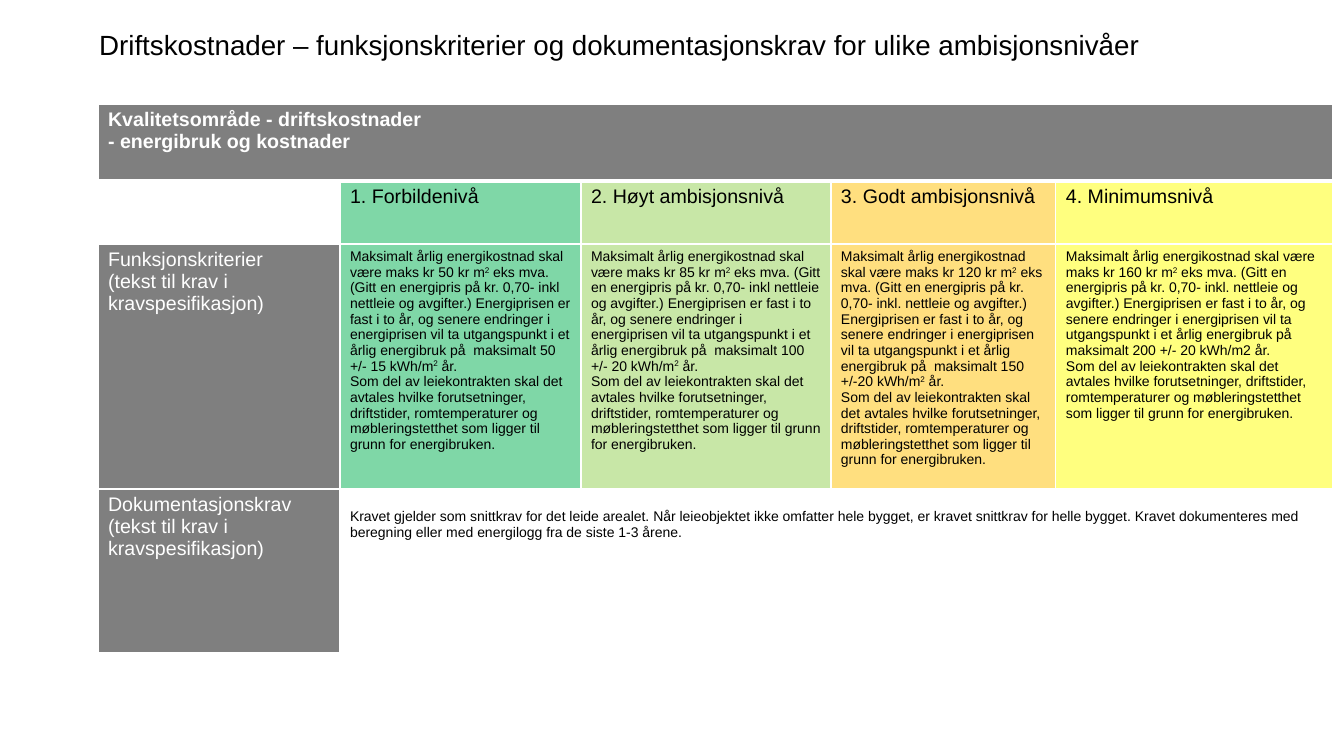
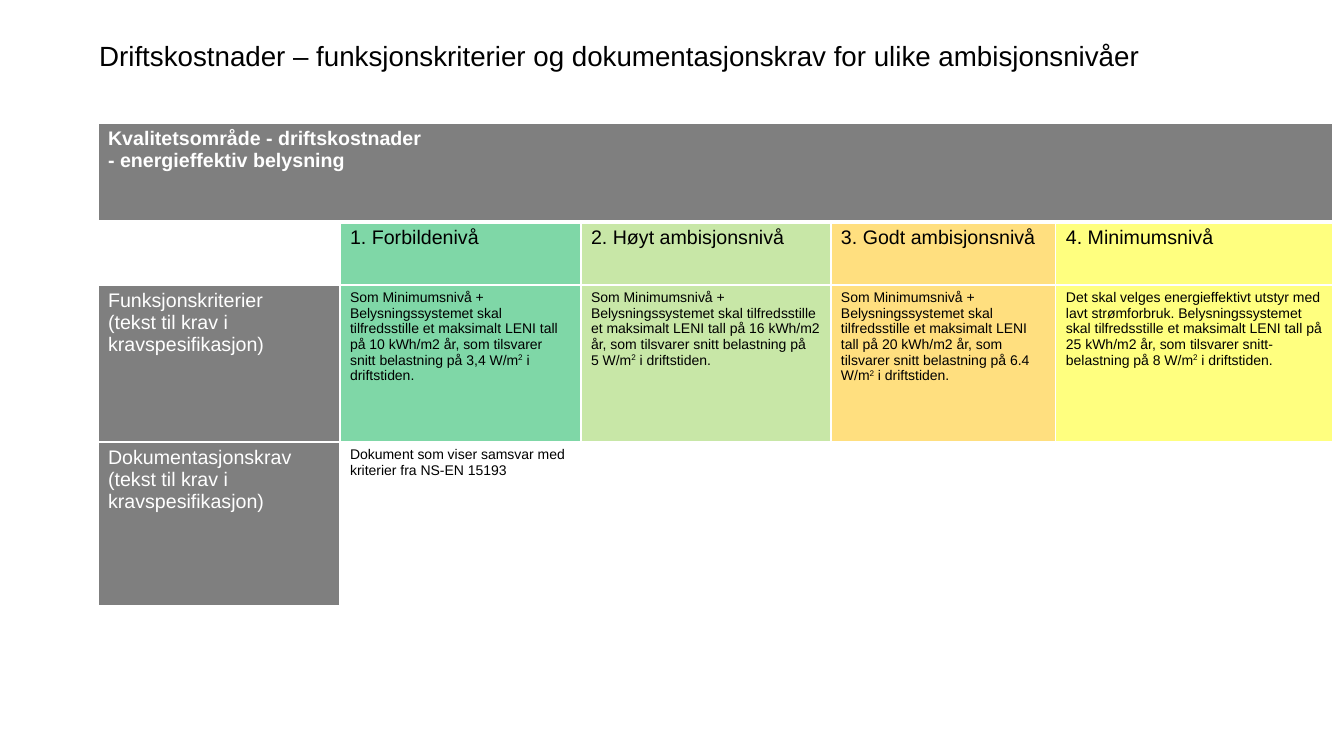
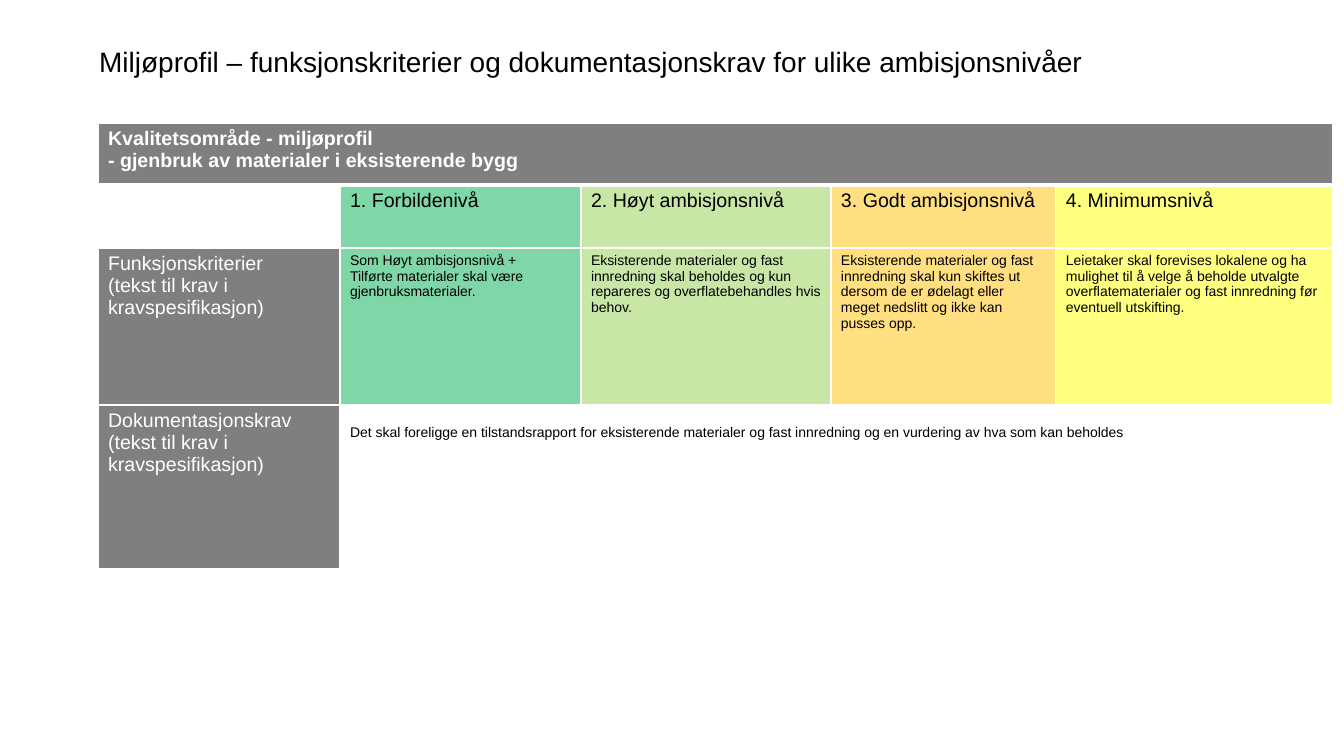
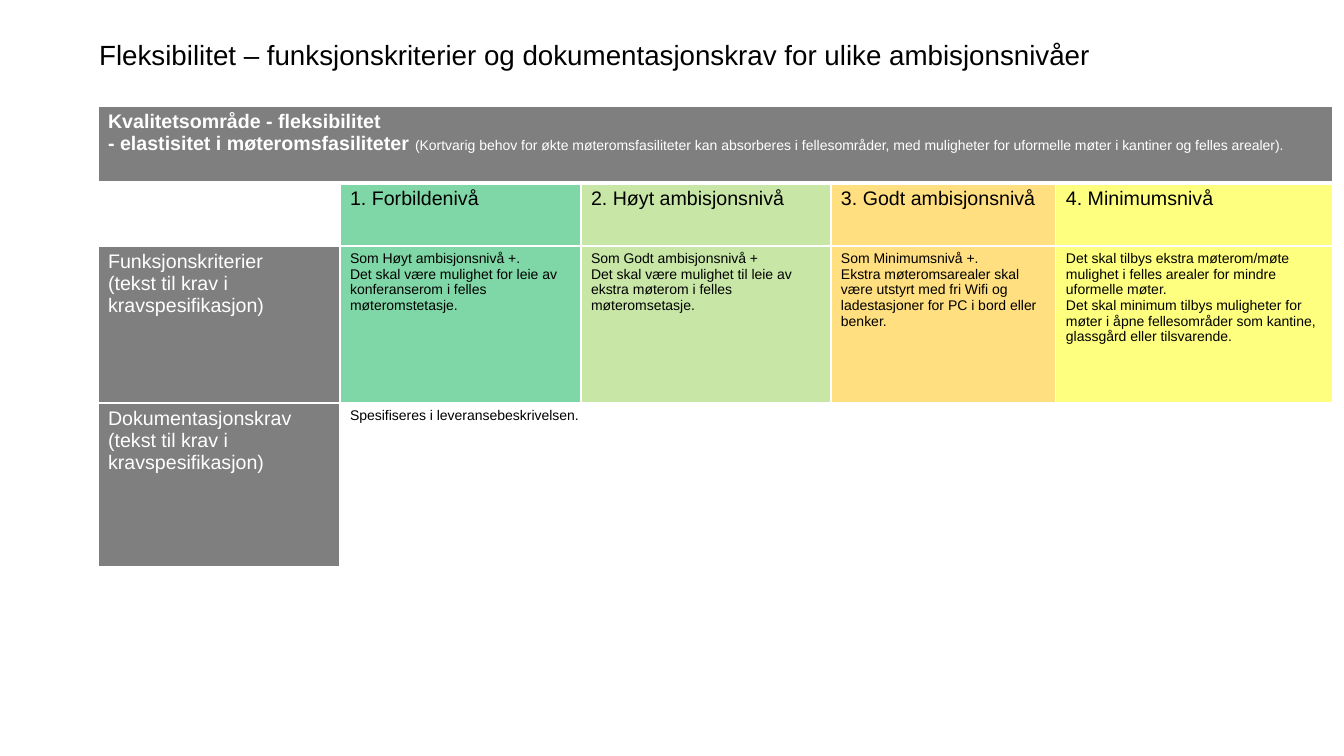
from dataclasses import dataclass

from lxml.etree import SubElement
from pptx import Presentation
from pptx.dml.color import RGBColor as RGB
from pptx.enum.text import MSO_ANCHOR, MSO_AUTO_SIZE, PP_ALIGN
from pptx.oxml.ns import qn
from pptx.util import Pt

PX = 914400 / 100.8


@dataclass(frozen=True)
class Theme:
    font: str = "Arial"
    black: str = "000000"
    white: str = "FFFFFF"
    levels: tuple = ("00B050", "92D050", "FFC000", "FFFF00")
    heading: int = 14
    body: int = 10
    border: int = 1
    header_rule: int = 3


T = Theme()

SLIDE_W, SLIDE_H = 1344, 756
TITLE_X, TITLE_W, TITLE_H = 89, 1159, 68
TABLE_X = 98
COLS = (242, 241, 250, 225, 277)
LEVEL_H, DOC_H = 63, 164
DOC_INSET, DOC_INSET_LOW = 5, 20

# How many columns each cell takes, from the second column on.
LEVEL_SPANS, DOC_SPANS = (1, 1, 1, 1), (4,)

LEVELS = ("1. Forbildenivå", "2. Høyt ambisjonsnivå",
          "3. Godt ambisjonsnivå", "4. Minimumsnivå")
CRITERIA_LABEL = "Funksjonskriterier\n(tekst til krav i kravspesifikasjon)"
DOC_LABEL = "Dokumentasjonskrav (tekst til krav i kravspesifikasjon)"
TITLE_END = " – funksjonskriterier og dokumentasjonskrav for ulike ambisjonsnivåer"

# In cell text, ^ raises the next character and a line break starts a paragraph.
ENERGY = ("Maksimalt årlig energikostnad skal være maks kr {} kr m^2 eks mva. "
          "(Gitt en energipris på kr. 0,70- {} nettleie og avgifter.) "
          "Energiprisen er fast i to år, og senere endringer i energiprisen vil ta "
          "utgangspunkt i et årlig energibruk på  maksimalt {} år.\n"
          "Som del av leiekontrakten skal det avtales hvilke forutsetninger, "
          "driftstider, romtemperaturer og møbleringstetthet som ligger til grunn "
          "for energibruken.")
LIGHTING = ("Som Minimumsnivå +\nBelysningssystemet skal tilfredsstille et maksimalt "
            "LENI tall på {} kWh/m2 år, som tilsvarer snitt belastning på{}W/m^2 "
            "i driftstiden.")

SLIDES = [
    dict(title="Driftskostnader", title_size=19.8, title_mid=44,
         top=104, header_h=77, criteria_h=245,
         header="Kvalitetsområde - driftskostnader\n- energibruk og kostnader",
         criteria=(ENERGY.format(50, "inkl", "50 +/- 15 kWh/m^2"),
                   ENERGY.format(85, "inkl", "100 +/- 20 kWh/m^2"),
                   ENERGY.format(120, "inkl.", "150 +/-20 kWh/m^2"),
                   ENERGY.format(160, "inkl.", "200 +/- 20 kWh/m2")),
         doc="Kravet gjelder som snittkrav for det leide arealet. Når leieobjektet ikke "
             "omfatter hele bygget, er kravet snittkrav for helle bygget. Kravet "
             "dokumenteres med beregning eller med energilogg fra de siste 1-3 årene.",
         doc_inset=DOC_INSET_LOW),
    dict(title="Driftskostnader", title_size=19.8, title_mid=55,
         top=123, header_h=99, criteria_h=157,
         cols=(242, 241, 13, 237, 13, 212, 32, 245),
         level_spans=(1, 2, 2, 2), doc_spans=(2, 2, 2, 1),
         header="Kvalitetsområde - driftskostnader\n- energieffektiv belysning",
         criteria=(LIGHTING.format(10, " 3,4 "),
                   LIGHTING.format(16, "\n5 "),
                   LIGHTING.format(20, " 6.4 "),
                   "Det skal velges energieffektivt utstyr med lavt strømforbruk. "
                   "Belysningssystemet skal tilfredsstille et maksimalt LENI tall på "
                   "25 kWh/m2 år, som tilsvarer snitt-belastning på 8 W/m^2 "
                   "i driftstiden."),
         doc="Dokument som viser samsvar med kriterier fra NS-EN 15193"),
    dict(title="Miljøprofil", title_size=20, title_mid=61,
         top=123, header_h=62, criteria_h=157,
         header="Kvalitetsområde - miljøprofil\n"
                "- gjenbruk av materialer i eksisterende bygg",
         criteria=("Som Høyt ambisjonsnivå +\n"
                   "Tilførte materialer skal være gjenbruksmaterialer.",
                   "Eksisterende materialer og fast innredning skal beholdes og kun "
                   "repareres og overflatebehandles hvis behov.",
                   "Eksisterende materialer og fast innredning skal kun skiftes ut "
                   "dersom de er ødelagt eller meget nedslitt og ikke kan pusses opp.",
                   "Leietaker skal forevises lokalene og ha mulighet til å velge å "
                   "beholde utvalgte overflatematerialer og fast innredning før "
                   "eventuell utskifting."),
         doc="Det skal foreligge en tilstandsrapport for eksisterende materialer og fast "
             "innredning og en vurdering av hva som kan beholdes",
         doc_inset=DOC_INSET_LOW),
    dict(title="Fleksibilitet", title_size=19.8, title_mid=54,
         top=106, header_h=77, criteria_h=157,
         header="Kvalitetsområde - fleksibilitet\n- elastisitet i møteromsfasiliteter ",
         header_note="(Kortvarig behov for økte møteromsfasiliteter kan absorberes i "
                     "fellesområder, med muligheter for uformelle møter i kantiner og "
                     "felles arealer).",
         criteria=("Som Høyt ambisjonsnivå +.\nDet skal være mulighet for leie av "
                   "konferanserom i felles møteromstetasje.",
                   "Som Godt ambisjonsnivå +\nDet skal være mulighet til leie av "
                   "ekstra møterom i felles møteromsetasje.",
                   "Som Minimumsnivå +.\nEkstra møteromsarealer skal være utstyrt med "
                   "fri Wifi og ladestasjoner for PC i bord eller benker.",
                   "Det skal tilbys ekstra møterom/møte mulighet i felles arealer for "
                   "mindre uformelle møter.\nDet skal minimum tilbys muligheter for "
                   "møter i åpne fellesområder som kantine, glassgård eller "
                   "tilsvarende."),
         doc="Spesifiseres i leveransebeskrivelsen."),
]


def px(n):
    return round(n * PX)


def set_font(font, size, color, bold=False):
    font.name, font.size, font.bold = T.font, Pt(size), bold
    font.color.rgb = RGB.from_string(color)


def add_text(p, text):
    """Fill a paragraph with runs, raising each character that follows a ^."""
    first, *rest = text.split("^")
    p.add_run().text = first
    for part in rest:
        r = p.add_run()
        r.text = part[0]
        r.font._element.set("baseline", "30000")
        p.add_run().text = part[1:]


def write(cell, text, size, color, bold=False):
    tf = cell.text_frame
    for i, line in enumerate(text.split("\n")):
        p = tf.add_paragraph() if i else tf.paragraphs[0]
        set_font(p.font, size, color, bold)
        add_text(p, line)


def set_borders(cell, bottom):
    tcPr = cell._tc.get_or_add_tcPr()
    for side in "LRTB":
        width = bottom if side == "B" else T.border
        ln = SubElement(tcPr, qn(f"a:ln{side}"), w=str(Pt(width)))
        SubElement(SubElement(ln, qn("a:solidFill")), qn("a:srgbClr"), val=T.white)


def set_fill(cell, color):
    """Fill a cell with the colour at half strength."""
    cell.fill.solid()
    cell.fill.fore_color.rgb = RGB.from_string(color)
    if color != T.white:
        clr = cell._tc.tcPr.find(qn("a:solidFill")).find(qn("a:srgbClr"))
        SubElement(clr, qn("a:alpha"), val="50000")


def merge_row(table, y, spans):
    """Merge a row's cells by the given spans and return the cells that remain."""
    cells, x = [], 0
    for span in spans:
        cell = table.cell(y, x)
        if span > 1:
            cell.merge(table.cell(y, x + span - 1))
        cells.append(cell)
        x += span
    return cells


def add_title(s, d):
    sp = s.shapes.title
    sp.left, sp.top = px(TITLE_X), px(d["title_mid"] - TITLE_H // 2)
    sp.width, sp.height = px(TITLE_W), px(TITLE_H)
    tf = sp.text_frame
    tf.text = d["title"] + TITLE_END
    tf.auto_size = MSO_AUTO_SIZE.NONE
    tf.vertical_anchor = MSO_ANCHOR.MIDDLE
    p = tf.paragraphs[0]
    p.alignment = PP_ALIGN.LEFT
    set_font(p.font, d["title_size"], T.black)


def add_levels_table(s, d):
    cols = d.get("cols", COLS)
    heights = (d["header_h"], LEVEL_H, d["criteria_h"], DOC_H)
    table = s.shapes.add_table(len(heights), len(cols), px(TABLE_X), px(d["top"]),
                               px(sum(cols)), px(sum(heights))).table
    table.first_row = table.horz_banding = False
    for col, w in zip(table.columns, cols):
        col.width = px(w)
    for y, (row, h) in enumerate(zip(table.rows, heights)):
        row.height = px(h)
        for cell in row.cells:
            set_borders(cell, T.border if y else T.header_rule)

    level_spans = (1, *d.get("level_spans", LEVEL_SPANS))
    doc_spans = (1, *d.get("doc_spans", DOC_SPANS))
    spans = ((len(cols),), level_spans, level_spans, doc_spans)
    fills = ((T.black,),
             (T.white, *T.levels),
             (T.black, *T.levels),
             (T.black,) + (T.white,) * (len(doc_spans) - 1))
    rows = [merge_row(table, y, row_spans) for y, row_spans in enumerate(spans)]
    for cells, colors in zip(rows, fills):
        for cell, color in zip(cells, colors):
            set_fill(cell, color)

    (header,), levels, criteria, docs = rows
    write(header, d["header"], T.heading, T.white, bold=True)
    if "header_note" in d:
        r = header.text_frame.paragraphs[-1].add_run()
        r.text = d["header_note"]
        set_font(r.font, T.body, T.white)
    for cell, level in zip(levels[1:], LEVELS):
        write(cell, level, T.heading, T.black)
    for cell, criterion in zip(criteria[1:], d["criteria"]):
        write(cell, criterion, T.body, T.black)
    write(criteria[0], CRITERIA_LABEL, T.heading, T.white)
    write(docs[0], DOC_LABEL, T.heading, T.white)
    docs[1].margin_top = px(d.get("doc_inset", DOC_INSET))
    write(docs[1], d["doc"], T.body, T.black)


def main():
    prs = Presentation()
    prs.slide_width, prs.slide_height = px(SLIDE_W), px(SLIDE_H)
    for d in SLIDES:
        s = prs.slides.add_slide(prs.slide_layouts.get_by_name("Title Only"))
        add_title(s, d)
        add_levels_table(s, d)
    prs.save("out.pptx")


if __name__ == "__main__":
    main()
